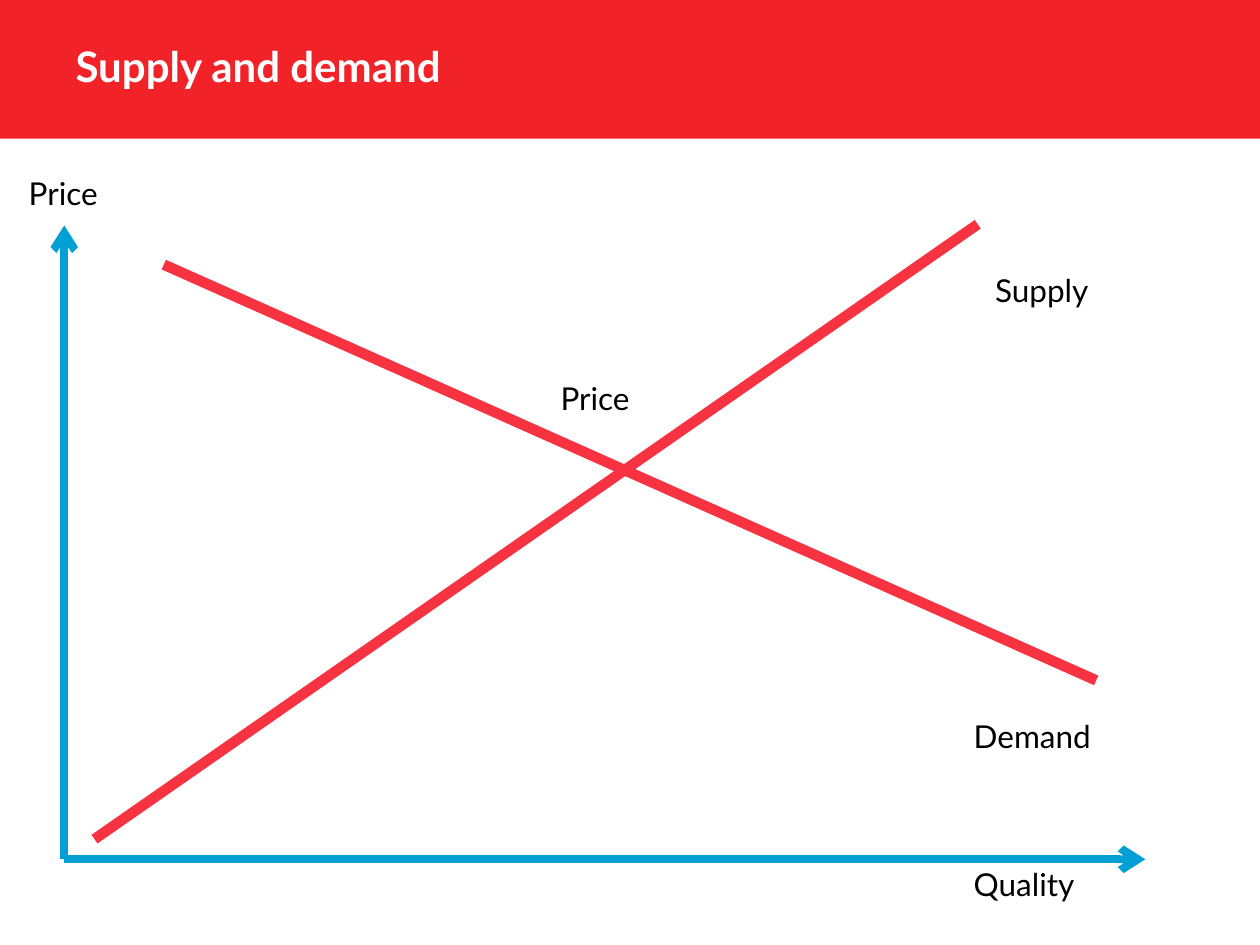
from dataclasses import dataclass

from lxml.etree import SubElement
from pptx import Presentation
from pptx.dml.color import RGBColor
from pptx.enum.shapes import MSO_CONNECTOR, MSO_SHAPE
from pptx.enum.text import MSO_ANCHOR, MSO_AUTO_SIZE, PP_ALIGN
from pptx.oxml.ns import qn
from pptx.util import Emu, Pt

PX = 9144  # EMU per px, 100 px to the inch


@dataclass(frozen=True)
class Theme:
    font: str = "Lato"
    banner: str = "F22229"
    title: str = "FFFFFF"
    text: str = "000000"
    axis: str = "00A0D5"
    curve: str = "F73241"
    title_size: int = 24
    label_size: int = 18
    axis_width: float = 4.5
    curve_width: float = 6


THEME = Theme()


def px(*values):
    return [Emu(v * PX) for v in values]


def write(sp, text, size, color, bold=False):
    tf = sp.text_frame
    tf.text = text
    tf.word_wrap = True
    p = tf.paragraphs[0]
    p.alignment = PP_ALIGN.LEFT
    font = p.runs[0].font
    font.name, font.size, font.bold = THEME.font, Pt(size), bold
    font.color.rgb = RGBColor.from_string(color)
    return tf


def add_line(slide, start, end, color, width, arrow=False):
    line = slide.shapes.add_connector(MSO_CONNECTOR.STRAIGHT, *px(*start, *end))
    line.line.color.rgb = RGBColor.from_string(color)
    line.line.width = Pt(width)
    if arrow:
        SubElement(line.line._get_or_add_ln(), qn("a:tailEnd"), type="arrow")
    SubElement(line._element.spPr, qn("a:effectLst"))


def add_label(slide, text, x, y, w, h=40):
    sp = slide.shapes.add_textbox(*px(x, y, w, h))
    tf = write(sp, text, THEME.label_size, THEME.text)
    tf.auto_size = MSO_AUTO_SIZE.SHAPE_TO_FIT_TEXT


def add_header(slide, text, x, y, w, h):
    # Banner, placed behind the title
    banner = slide.shapes.add_shape(MSO_SHAPE.RECTANGLE, *px(x, y, w, h))
    banner.shadow.inherit = False
    banner.fill.solid()
    banner.fill.fore_color.rgb = RGBColor.from_string(THEME.banner)
    banner.line.fill.background()
    title = slide.shapes.title
    title._element.addprevious(banner._element)

    # Title
    title.left, title.top, title.width, title.height = px(x + 50, y + 13, 796, 79)
    tf = write(title, text, THEME.title_size, THEME.title, bold=True)
    tf.vertical_anchor = MSO_ANCHOR.MIDDLE
    tf.auto_size = MSO_AUTO_SIZE.NONE


def add_diagram(slide, x, y, w, h):
    bottom = y + h

    # Axes, both from the origin
    for end in ((x, y), (x + w, bottom)):
        add_line(slide, (x, bottom), end, THEME.axis, THEME.axis_width, arrow=True)

    # Supply and demand curves
    curves = (
        ((24, h - 16), (725, -1)),
        ((79, 31), (819, 361)),
    )
    for (x1, y1), (x2, y2) in curves:
        add_line(slide, (x + x1, y + y1), (x + x2, y + y2),
                 THEME.curve, THEME.curve_width)

    # Labels: text, offset from the plot's top left corner, width
    labels = (
        ("Price", 384, 117, 91),
        ("Supply", 729, 31, 107),
        ("Demand", 712, 385, 123),
        ("Quality", 712, h, 123),
        ("Price", -38, -46, 123),
    )
    for text, dx, dy, width in labels:
        add_label(slide, text, x + dx, y + dy, width)


def main():
    prs = Presentation()
    prs.slide_width, prs.slide_height = px(1000, 750)
    slide = prs.slides.add_slide(prs.slide_layouts.get_by_name("Title Only"))
    add_header(slide, "Supply and demand", 0, 0, 1000, 110)
    add_diagram(slide, 51, 179, 858, 503)
    prs.save("out.pptx")


if __name__ == "__main__":
    main()
